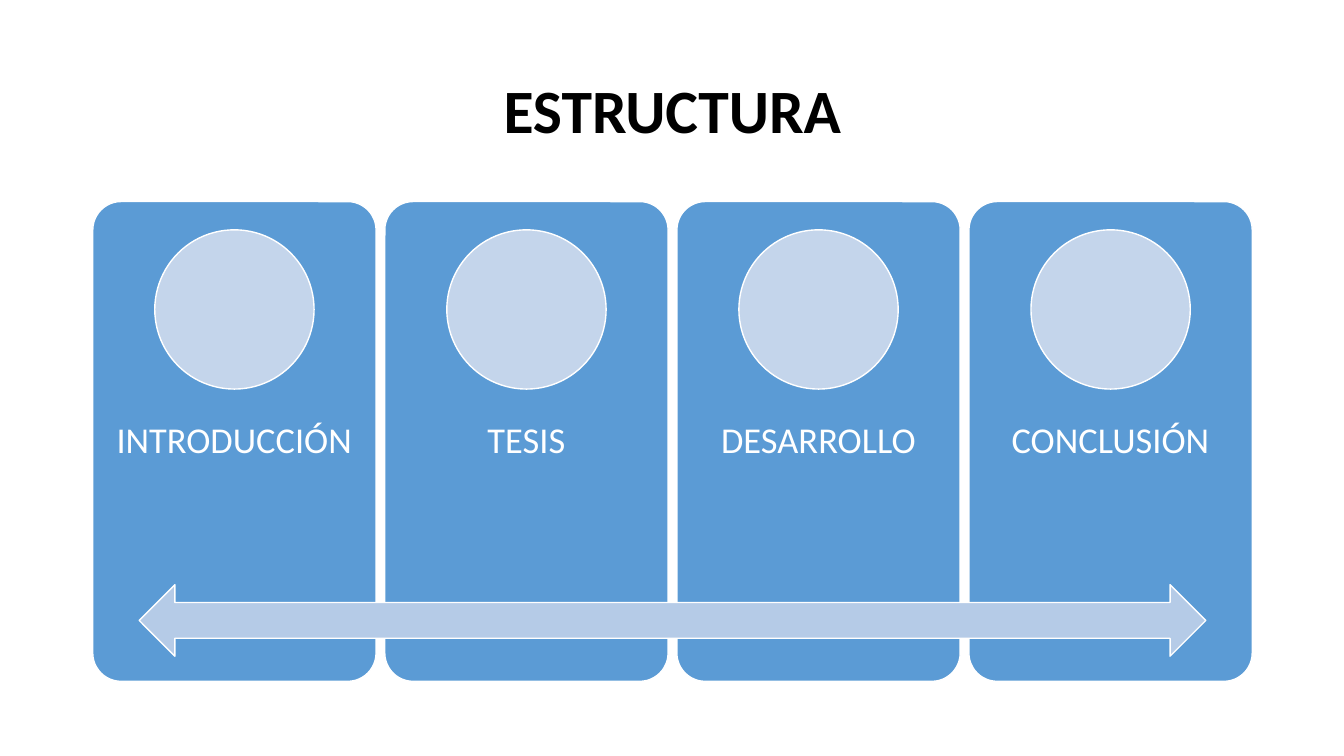
from pptx import Presentation
from pptx.dml.color import RGBColor
from pptx.enum.shapes import MSO_SHAPE
from pptx.enum.text import MSO_ANCHOR, PP_ALIGN
from pptx.util import Inches, Pt

ROUNDED = MSO_SHAPE.ROUNDED_RECTANGLE
OVAL = MSO_SHAPE.OVAL
ARROW = MSO_SHAPE.LEFT_RIGHT_ARROW
MIDDLE = MSO_ANCHOR.MIDDLE
CENTER = PP_ALIGN.CENTER

# Content
TITLE = "ESTRUCTURA"
STAGES = ["INTRODUCCIÓN", "TESIS", "DESARROLLO", "CONCLUSIÓN"]
FONT = "Calibri"
COLORS = {"card": "5B9BD5", "circle": "C4D5EB", "arrow": "B5CBE7",
          "white": "FFFFFF", "title": "000000"}

# Layout in inches
SLIDE_W, SLIDE_H = 13.33, 7.5
LEFT, WIDTH = 0.92, 11.5
CARD_TOP, CARD_W, CARD_H = 2, 2.81, 4.76
CARD_STEP = (WIDTH - CARD_W) / (len(STAGES) - 1)
CIRCLE_TOP, CIRCLE_SIZE = 2.28, 1.58
ARROW_TOP, ARROW_W, ARROW_H = 5.8, 10.58, 0.71
TEXT_INSET = 0.1


def color(name):
    return RGBColor.from_string(COLORS[name])


def add_shape(s, kind, fill, x, y, w, h):
    sp = s.shapes.add_shape(kind, Inches(x), Inches(y), Inches(w), Inches(h))
    sp.shadow.inherit = False
    sp.fill.solid()
    sp.fill.fore_color.rgb = color(fill)
    sp.line.color.rgb = color("white")
    sp.line.width = Pt(1)
    return sp


def write(sp, text, size, text_color, bold=False):
    tf = sp.text_frame
    tf.word_wrap = True
    tf.vertical_anchor = MIDDLE
    tf.margin_left = tf.margin_right = Inches(TEXT_INSET)
    p = tf.paragraphs[0]
    p.alignment = CENTER
    p.line_spacing = 0.9
    r = p.add_run()
    r.text = text
    r.font.name = FONT
    r.font.size = Pt(size)
    r.font.bold = bold
    r.font.color.rgb = color(text_color)


prs = Presentation()
prs.slide_width, prs.slide_height = Inches(SLIDE_W), Inches(SLIDE_H)
s = prs.slides.add_slide(prs.slide_layouts[6])

# Title
title = s.shapes.add_textbox(Inches(LEFT), Inches(0.4), Inches(WIDTH), Inches(1.45))
write(title, TITLE, 44, "title", bold=True)

# Stage cards with their circles
for i, stage in enumerate(STAGES):
    x = LEFT + i * CARD_STEP
    card = add_shape(s, ROUNDED, "card", x, CARD_TOP, CARD_W, CARD_H)
    card.adjustments[0] = 0.1
    write(card, stage, 26, "white")
    add_shape(s, OVAL, "circle", x + (CARD_W - CIRCLE_SIZE) / 2, CIRCLE_TOP,
              CIRCLE_SIZE, CIRCLE_SIZE)

# Double arrow across the cards
add_shape(s, ARROW, "arrow", LEFT + (WIDTH - ARROW_W) / 2, ARROW_TOP, ARROW_W, ARROW_H)

prs.save("out.pptx")
